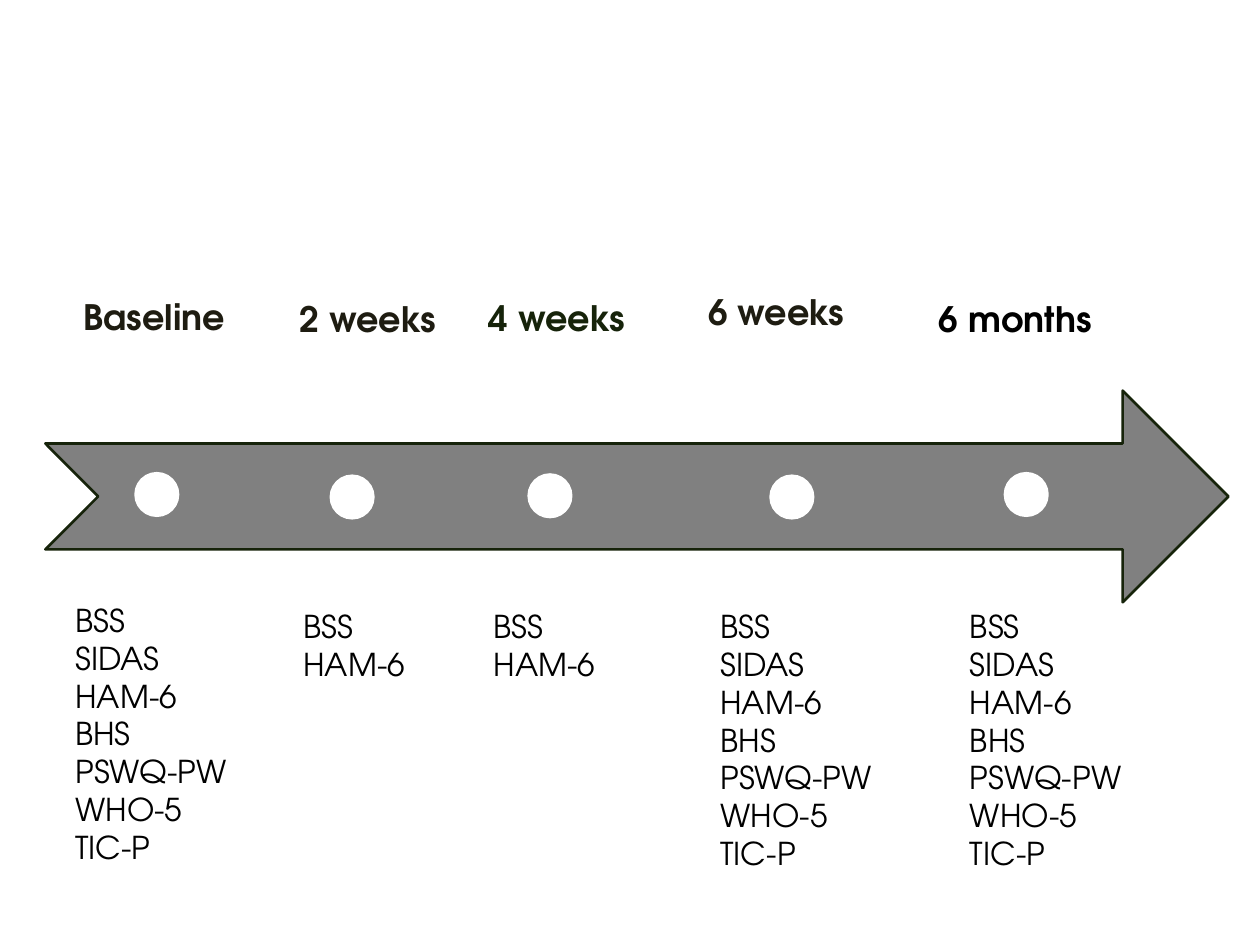
import pptx
import pptx.util
import pptx.dml.color
import pptx.enum.shapes
import pptx.enum.text
from dataclasses import dataclass

Inches, Pt = pptx.util.Inches, pptx.util.Pt
Shape = pptx.enum.shapes.MSO_SHAPE
Anchor = pptx.enum.text.MSO_ANCHOR
Align = pptx.enum.text.PP_ALIGN


@dataclass(frozen=True)
class Theme:
    font: str = "TeX Gyre Adventor"
    label_size: int = 20
    list_size: int = 18
    black: str = "000000"
    brown: str = "1E1C11"
    green: str = "16230A"
    arrow: str = "808080"
    dot: str = "FFFFFF"


THEME = Theme()

# Content: each stage with its measures; places are in inches
SHORT = ["BSS", "HAM-6"]
FULL = ["BSS", "SIDAS", "HAM-6", "BHS", "PSWQ-PW", "WHO-5", "TIC-P"]
STAGES = [
    dict(label="Baseline", color=THEME.brown, box=(0.31, 1.55, 1.83, 1.6),
         anchor=Anchor.MIDDLE, inset=0.14, drop=0.36,
         dot=(1.08, 3.76), measures=FULL, column=(0.5, 4.72, 1.58)),
    dict(label="2 weeks", color=THEME.brown, box=(2.16, 2.25, 1.52, 1.27),
         anchor=Anchor.TOP, inset=0.16, drop=0,
         dot=(2.63, 3.78), measures=SHORT, column=(2.31, 4.77, 1.33)),
    dict(label="4 weeks", color=THEME.green, box=(3.66, 1.68, 1.52, 1.72),
         anchor=Anchor.MIDDLE, inset=0.16, drop=0,
         dot=(4.2, 3.77), measures=SHORT, column=(3.82, 4.77, 1.14)),
    dict(label="6 weeks", color=THEME.brown, box=(5.15, 1.9, 2.02, 0.89),
         anchor=Anchor.BOTTOM, inset=0.16, drop=0,
         dot=(6.12, 3.78), measures=FULL, column=(5.62, 4.77, 1.53)),
    dict(label="6 months", color=THEME.black, box=(7.25, 2.25, 1.62, 1.13),
         anchor=Anchor.TOP, inset=0.16, drop=0,
         dot=(7.98, 3.76), measures=FULL, column=(7.6, 4.77, 1.5)),
]
ARROW = (0.36, 3.1, 9.39, 1.68)
DOT_SIZE = 0.33
LINE_HEIGHT = 0.3
LIST_MARGIN = 0.11


def rgb(code):
    return pptx.dml.color.RGBColor.from_string(code)


def add_figure(page, kind, place, fill, line, width):
    shape = page.shapes.add_shape(kind, *map(Inches, place))
    shape.shadow.inherit = False
    shape.fill.solid()
    shape.fill.fore_color.rgb = rgb(fill)
    shape.line.color.rgb = rgb(line)
    shape.line.width = Pt(width)


def add_text(page, place, text, size, color, bold=False):
    box = page.shapes.add_textbox(*map(Inches, place))
    frame = box.text_frame
    frame.word_wrap = True
    frame.text = text
    for para in frame.paragraphs:
        for span in para.runs:
            span.font.name = THEME.font
            span.font.size = Pt(size)
            span.font.bold = bold
            span.font.color.rgb = rgb(color)
    return frame


def add_label(page, stage):
    frame = add_text(page, stage["box"], stage["label"],
                     THEME.label_size, stage["color"], bold=True)
    frame.vertical_anchor = stage["anchor"]
    inset = Inches(stage["inset"])
    frame.margin_left = frame.margin_right = frame.margin_bottom = inset
    frame.margin_top = inset + Inches(stage["drop"])
    para = frame.paragraphs[0]
    para.alignment = Align.CENTER
    para.line_spacing = 0.9


def add_measures(page, stage):
    measures = stage["measures"]
    height = LINE_HEIGHT * len(measures) + LIST_MARGIN
    add_text(page, (*stage["column"], height), "\n".join(measures),
             THEME.list_size, THEME.black)


def main():
    deck = pptx.Presentation()
    deck.slide_width, deck.slide_height = Inches(10), Inches(7.5)
    page = deck.slides.add_slide(deck.slide_layouts[6])

    # Timeline arrow
    add_figure(page, Shape.NOTCHED_RIGHT_ARROW, ARROW,
               THEME.arrow, THEME.green, 1.5)

    # Label, marker and measures of each stage
    for stage in STAGES:
        add_label(page, stage)
        add_figure(page, Shape.OVAL, (*stage["dot"], DOT_SIZE, DOT_SIZE),
                   THEME.dot, THEME.dot, 2)
        add_measures(page, stage)

    deck.save("out.pptx")


if __name__ == "__main__":
    main()
